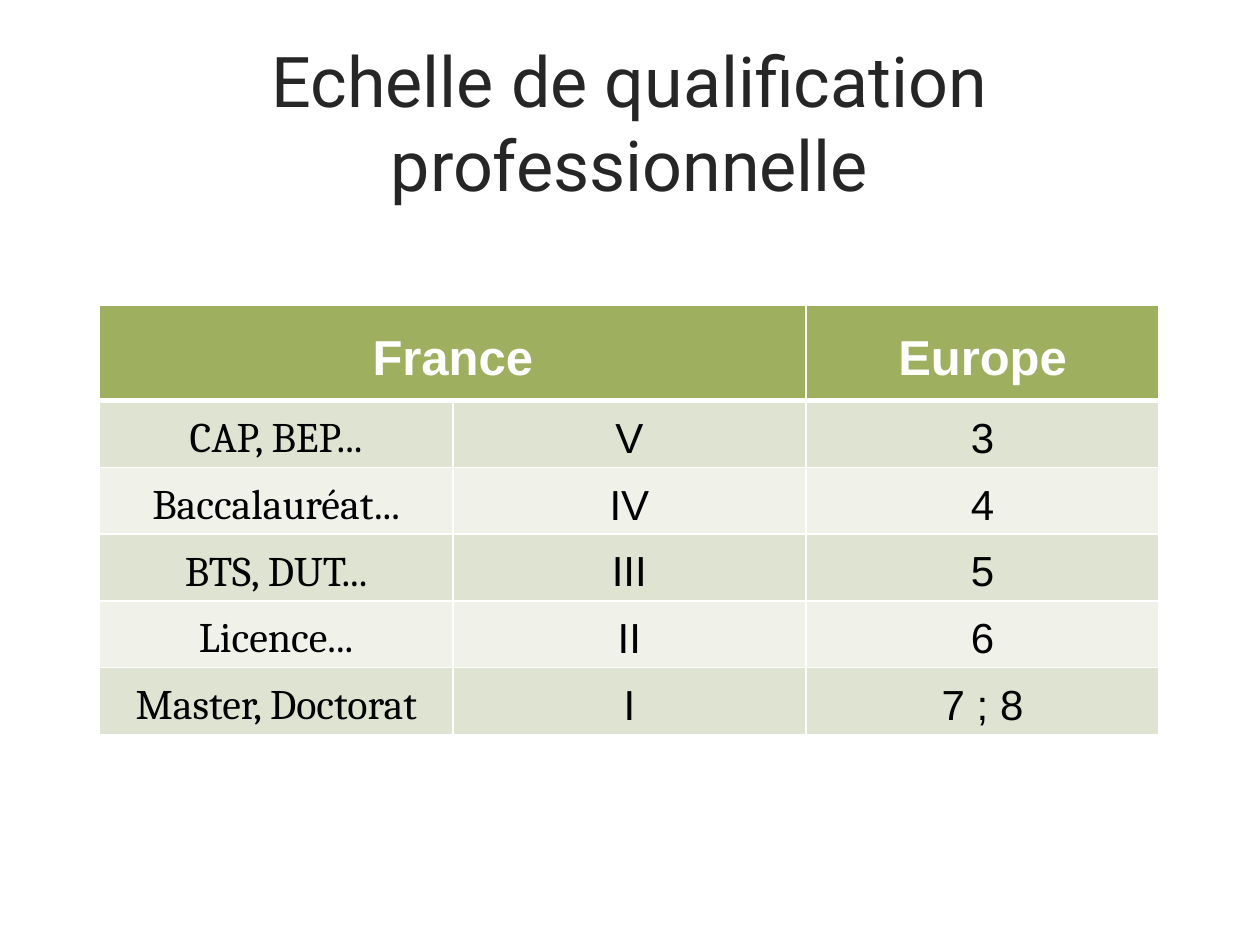
from lxml import etree
from pptx import Presentation
from pptx.dml.color import RGBColor
from pptx.enum.text import MSO_ANCHOR, PP_ALIGN
from pptx.oxml.ns import qn
from pptx.util import Inches, Pt

CENTER = PP_ALIGN.CENTER
MIDDLE = MSO_ANCHOR.MIDDLE
TITLE_ONLY = 5

COLORS = {
    "title": "262626",
    "header": "9EB060",
    "odd": "DFE4D2",
    "even": "F0F2EA",
    "white": "FFFFFF",
    "text": "000000",
}

ROWS = [
    ("France", "", "Europe"),
    ("CAP, BEP...", "V", "3"),
    ("Baccalauréat...", "IV", "4"),
    ("BTS, DUT...", "III", "5"),
    ("Licence...", "II", "6"),
    ("Master, Doctorat", "I", "7 ; 8"),
]
HEADER_SHARE = 0.76 / 3.41  # header row's share of the table height


def rgb(name):
    return RGBColor.from_string(COLORS[name])


def style_paragraph(p, font, size, color, bold=False):
    p.alignment = CENTER
    p.font.name = font
    p.font.size = Pt(size)
    p.font.bold = bold
    p.font.color.rgb = rgb(color)


def set_borders(cell, bottom):
    tc_pr = cell._tc.get_or_add_tcPr()
    for side, width in (("L", 1), ("R", 1), ("T", 1), ("B", bottom)):
        ln = etree.SubElement(tc_pr, qn(f"a:ln{side}"), w=str(Pt(width)))
        fill = etree.SubElement(ln, qn("a:solidFill"))
        etree.SubElement(fill, qn("a:srgbClr"), val=COLORS["white"])


def add_title(s, text, left, top, width, height):
    title = s.shapes.title
    title.left, title.top, title.width, title.height = left, top, width, height
    tf = title.text_frame
    tf.text = text
    tf.word_wrap = True
    tf.vertical_anchor = MIDDLE
    style_paragraph(tf.paragraphs[0], "Roboto", 40, "title")


def fill_cell(cell, text, row, col):
    header = row == 0
    cell.margin_left = cell.margin_right = 0
    cell.margin_top = cell.margin_bottom = 0
    cell.vertical_anchor = MIDDLE
    set_borders(cell, bottom=3 if header else 1)
    cell.fill.solid()
    cell.fill.fore_color.rgb = rgb("header" if header else "odd" if row % 2 else "even")
    if not text:
        return
    cell.text = text
    p = cell.text_frame.paragraphs[0]
    p.line_spacing = 1.2
    if header:
        style_paragraph(p, "Arial", 28, "white", bold=True)
    else:
        style_paragraph(p, "Arial" if col else "Cambria", 24, "text")


def add_levels_table(s, left, top, width, height):
    n_rows, n_cols = len(ROWS), len(ROWS[0])
    table = s.shapes.add_table(n_rows, n_cols, left, top, width, height).table

    # Taller header, equal body rows
    header_height = int(height * HEADER_SHARE)
    table.rows[0].height = header_height
    for r in range(1, n_rows):
        table.rows[r].height = (height - header_height) // (n_rows - 1)

    for r, row in enumerate(ROWS):
        for c, text in enumerate(row):
            fill_cell(table.cell(r, c), text, r, c)

    # "France" covers diplomas and levels
    table.cell(0, 0).merge(table.cell(0, 1))


def main():
    prs = Presentation()
    prs.slide_width, prs.slide_height = Inches(10), Inches(7.5)
    s = prs.slides.add_slide(prs.slide_layouts[TITLE_ONLY])
    s.background.fill.solid()
    s.background.fill.fore_color.rgb = rgb("white")

    # Title and table share one centred column
    left, width = Inches(0.79), Inches(8.41)
    add_title(s, "Echelle de qualification professionnelle",
              left, Inches(0.34), width, Inches(1.25))
    add_levels_table(s, left, Inches(2.42), width, Inches(3.41))
    prs.save("out.pptx")


if __name__ == "__main__":
    main()
